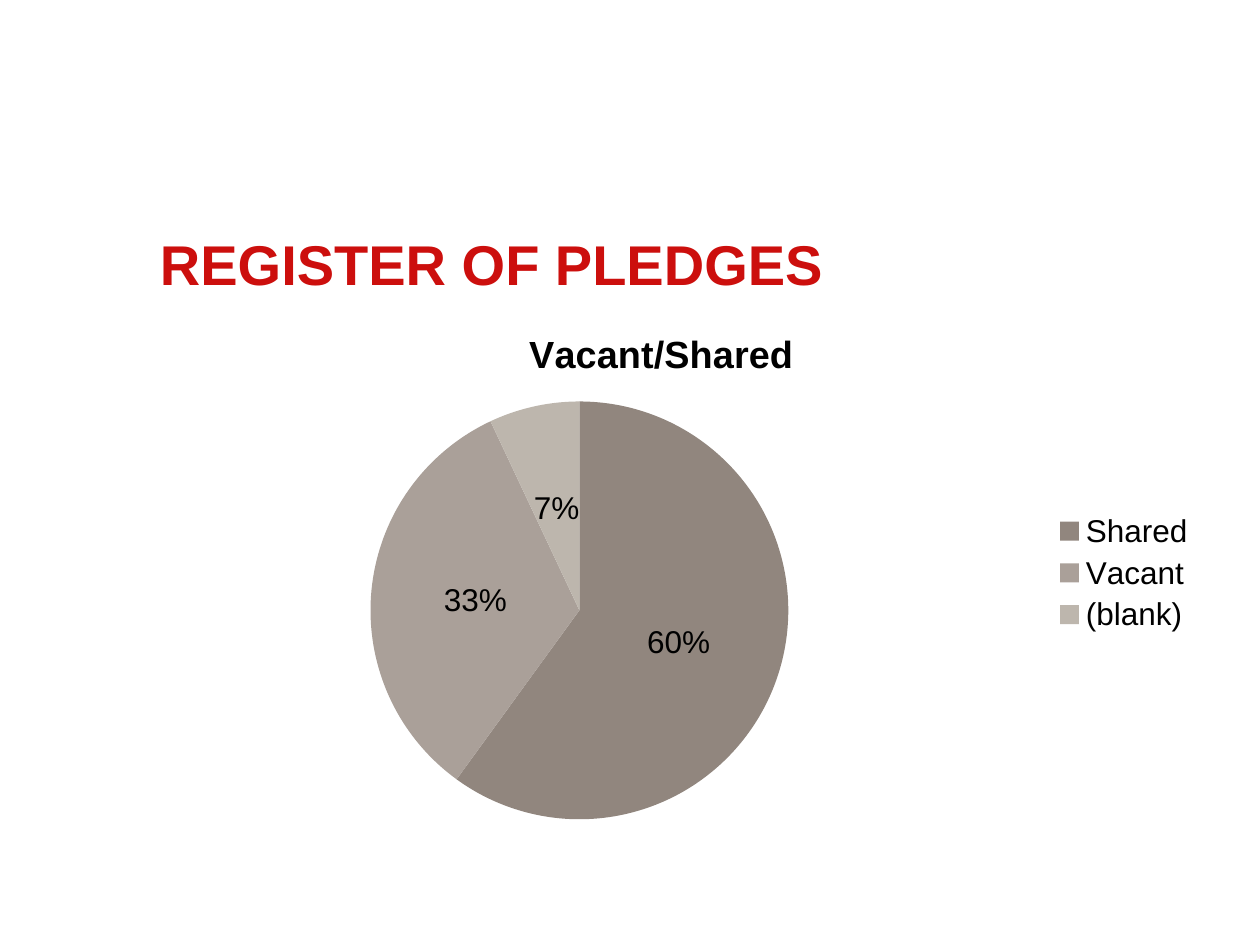
from lxml.etree import SubElement as Sub
from pptx import Presentation as Deck
from pptx.chart.data import CategoryChartData as Data
from pptx.dml.color import RGBColor as Rgb
from pptx.enum.chart import XL_CHART_TYPE as Kind
from pptx.enum.chart import XL_LABEL_POSITION as Spot
from pptx.enum.chart import XL_LEGEND_POSITION as Side
from pptx.enum.text import MSO_ANCHOR as Anchor
from pptx.enum.text import PP_ALIGN as Align
from pptx.oxml.ns import qn
from pptx.util import Cm, Pt

RED = Rgb(0xCC, 0x0F, 0x0D)
BLACK = Rgb(0, 0, 0)
BROWN = Rgb(0x91, 0x86, 0x7E)
MAUVE = Rgb(0xAA, 0xA0, 0x99)
STONE = Rgb(0xBD, 0xB6, 0xAD)


class Page:
    face = "Arial"

    def __init__(self, deck):
        self.slide = deck.slides.add_slide(deck.slide_layouts[5])

    def style(self, font, size, color, bold=False):
        values = {"name": self.face, "size": Pt(size), "bold": bold}
        for key, value in values.items():
            setattr(font, key, value)
        font.color.rgb = color

    def title(self, text, box):
        shape = self.slide.shapes.title
        for key, value in zip(("left", "top", "width", "height"), box):
            setattr(shape, key, Cm(value))
        frame = shape.text_frame
        frame.text = text
        frame.word_wrap = True
        frame.vertical_anchor = Anchor.MIDDLE
        line = frame.paragraphs[0]
        line.alignment = Align.LEFT
        self.style(line.runs[0].font, 32, RED, True)

    def pie(self, name, parts, box, area):
        data = Data()
        data.categories = [label for label, _, _ in parts]
        data.add_series("Series 1", [value for _, value, _ in parts])
        frame = self.slide.shapes.add_chart(
            Kind.PIE, *[Cm(value) for value in box], data)
        chart = frame.chart
        self.style(chart.font, 18, BLACK)

        # Heading and legend
        chart.has_title = True
        head = chart.chart_title.text_frame
        head.text = name
        self.style(head.paragraphs[0].runs[0].font, 21.6, BLACK, True)
        chart.has_legend = True
        chart.legend.position = Side.RIGHT
        chart.legend.include_in_layout = False

        # Slices
        plot = chart.plots[0]
        plot.vary_by_categories = True
        for i, (_, _, color) in enumerate(parts):
            fill = plot.series[0].points[i].format.fill
            fill.solid()
            fill.fore_color.rgb = color

        # Percentages
        labels = plot.series[0].data_labels
        values = {"show_percentage": True, "show_value": False,
                  "number_format": "0%", "number_format_is_linked": False,
                  "position": Spot.CENTER}
        for key, value in values.items():
            setattr(labels, key, value)
        self.style(labels.font, 18, BLACK)

        self.place(chart, area)

    def place(self, chart, area):
        # Fixed plot area, as shares of the chart frame
        plot = chart._chartSpace.chart.plotArea
        for old in plot.findall(qn("c:layout")):
            plot.remove(old)
        layout = plot.makeelement(qn("c:layout"), {})
        plot.insert(0, layout)
        manual = Sub(layout, qn("c:manualLayout"))
        values = {"layoutTarget": "inner", "xMode": "edge", "yMode": "edge"}
        values.update(zip("xywh", area))
        for key, value in values.items():
            Sub(manual, qn("c:" + key)).set("val", str(value))


def main():
    deck = Deck()
    deck.slide_width, deck.slide_height = Cm(25.4), Cm(19.05)
    page = Page(deck)
    page.title("REGISTER OF PLEDGES", (2.97, 4.45, 20.55, 1.7))
    parts = [("Shared", 60, BROWN), ("Vacant", 33, MAUVE),
             ("(blank)", 7, STONE)]
    page.pie("Vacant/Shared", parts, (2.31, 6.15, 22.05, 10.8),
             (0.23, 0.18, 0.39, 0.78))
    deck.save("out.pptx")


if __name__ == "__main__":
    main()
